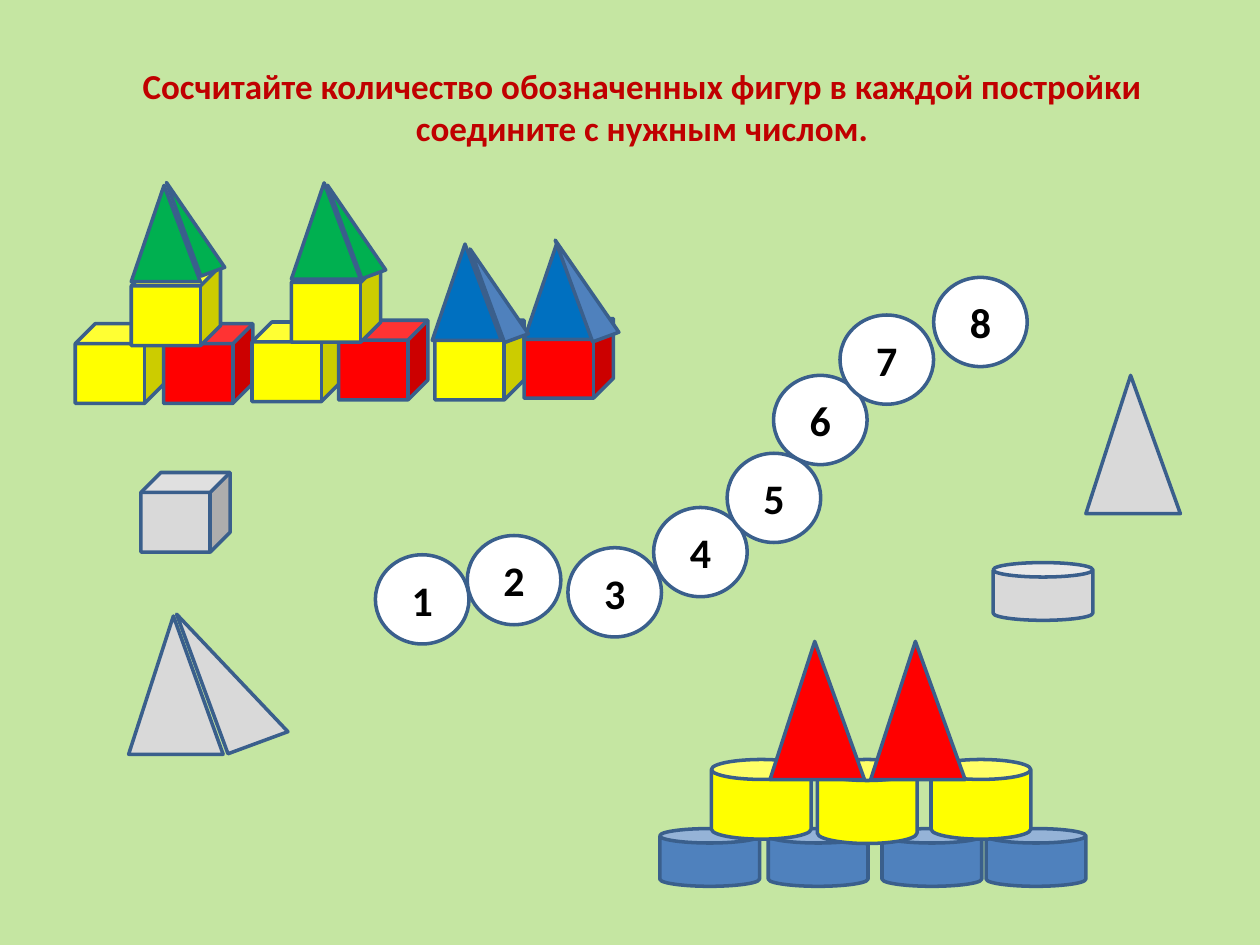
from dataclasses import dataclass

from pptx import Presentation
from pptx.dml.color import RGBColor
from pptx.enum.shapes import MSO_SHAPE as Shape
from pptx.enum.text import MSO_ANCHOR as Anchor, PP_ALIGN as Align
from pptx.util import Pt


@dataclass(frozen=True)
class Theme:
    """Colours, type and shared figure sizes of the slide."""
    background: str = "C5E6A2"
    outline: str = "3A5F8C"
    title: str = "C00000"
    number: str = "000000"
    white: str = "FFFFFF"
    yellow: str = "FFFF00"
    red: str = "FF0000"
    green: str = "00B050"
    blue: str = "0070C0"
    steel: str = "4F81BD"
    grey: str = "D9D9D9"
    font: str = "Calibri"
    title_size: int = 20
    number_size: int = 24
    line_width: int = 2
    ball: tuple = (53.5, 51)
    cube: tuple = (51, 45.5)
    can: tuple = (57, 33)
    cone: tuple = (54, 79)
    roof: tuple = (39.5, 55)


T = Theme()


def add_figure(slide, kind, box, at, size, color, adjust=None, rotation=0):
    """Place an outlined figure at an offset inside a box."""
    left, top = box[0] + at[0], box[1] + at[1]
    sp = slide.shapes.add_shape(kind, Pt(left), Pt(top), Pt(size[0]), Pt(size[1]))
    sp.shadow.inherit = False
    sp.fill.solid()
    sp.fill.fore_color.rgb = RGBColor.from_string(color)
    sp.line.color.rgb = RGBColor.from_string(T.outline)
    sp.line.width = Pt(T.line_width)
    sp.rotation = rotation
    if adjust is not None:
        sp.adjustments[0] = adjust
    return sp


def add_cone(slide, box, at, size, color):
    """Place a triangle with its tip slightly left of centre."""
    add_figure(slide, Shape.ISOSCELES_TRIANGLE, box, at, size, color, adjust=0.474)


def add_side(slide, box, at, size, color):
    """Place the tilted side face of a pyramid."""
    add_figure(slide, Shape.RIGHT_TRIANGLE, box, at, size, color, rotation=339.8)


def set_text(sp, text, size, color):
    """Write centred bold text in a shape."""
    tf = sp.text_frame
    tf.word_wrap = True
    tf.vertical_anchor = Anchor.MIDDLE
    p = tf.paragraphs[0]
    p.text = text
    p.alignment = Align.CENTER
    font = p.runs[0].font
    font.name, font.size, font.bold = T.font, Pt(size), True
    font.color.rgb = RGBColor.from_string(color)


def add_title(slide, box):
    """Write the task across the top."""
    sp = slide.shapes.add_textbox(*map(Pt, box))
    set_text(sp, "Сосчитайте количество обозначенных фигур в каждой постройки "
                 "соедините с нужным числом.", T.title_size, T.title)


def add_castle(slide, box):
    """Build the castle of cubes and pyramids."""
    cubes = [
        (0, 85, T.yellow), (50.5, 85, T.red), (101, 84, T.yellow),
        (150.5, 83, T.red), (205.5, 83, T.yellow), (256.5, 82, T.red),
        (32, 52, T.yellow), (123.5, 50, T.yellow),
    ]
    for x, y, color in cubes:
        add_figure(slide, Shape.CUBE, box, (x, y), T.cube, color)
    roofs = [(32, 6, T.green), (123.5, 4.5, T.green),
             (204, 39.5, T.blue), (256.5, 39, T.blue)]
    for x, y, color in roofs:
        add_cone(slide, box, (x, y), T.roof, color)
    sides = [
        (61.5, 0, 14.5, 57, T.green), (153.5, 1.5, 14.5, 57, T.green),
        (284.5, 32.5, 16, 62, T.steel), (235, 38, 14.5, 57, T.steel),
    ]
    for x, y, width, height, color in sides:
        add_side(slide, box, (x, y), (width, height), color)


def add_tower(slide, box):
    """Build the tower of cylinders and cones."""
    for x in (186.5, 127, 62, 0):
        add_figure(slide, Shape.CAN, box, (x, 107.5), T.can, T.steel)
    for x, height in ((155, 45.5), (90, 48), (29.5, 45.5)):
        add_figure(slide, Shape.CAN, box, (x, 68), (T.can[0], height), T.yellow)
    for x in (63, 120.5):
        add_cone(slide, box, (x, 0.5), T.cone, T.red)


def add_numbers(slide, box):
    """Lay the numbered balls along a rising path."""
    places = [(0, 158.5), (52.5, 147.5), (110, 154.5), (159, 131.5),
              (201, 100.5), (227.5, 56), (265.5, 21.5), (319, 0)]
    for number, at in enumerate(places, 1):
        sp = add_figure(slide, Shape.OVAL, box, at, T.ball, T.white)
        set_text(sp, str(number), T.number_size, T.number)


def add_castle_samples(slide, box):
    """Show the cube and pyramid to be counted."""
    add_figure(slide, Shape.CUBE, box, (7, 0), T.cube, T.grey)
    add_cone(slide, box, (0, 82), T.cone, T.grey)
    add_side(slide, box, (41, 72), (36.5, 85), T.grey)


def add_tower_samples(slide, box):
    """Show the cone and cylinder to be counted."""
    add_cone(slide, box, (53, 0), T.cone, T.grey)
    add_figure(slide, Shape.CAN, box, (0, 107), T.can, T.grey)


def main():
    """Build and save the counting slide."""
    prs = Presentation()
    prs.slide_width, prs.slide_height = Pt(720), Pt(540)
    slide = prs.slides.add_slide(prs.slide_layouts[6])
    fill = slide.background.fill
    fill.solid()
    fill.fore_color.rgb = RGBColor.from_string(T.background)
    add_title(slide, (43, 16, 648, 90))
    add_castle(slide, (43, 100))
    add_tower(slide, (377, 366))
    add_castle_samples(slide, (73.5, 270))
    add_numbers(slide, (214.5, 158.5))
    add_tower_samples(slide, (567.5, 214.5))
    prs.save("out.pptx")


if __name__ == "__main__":
    main()
